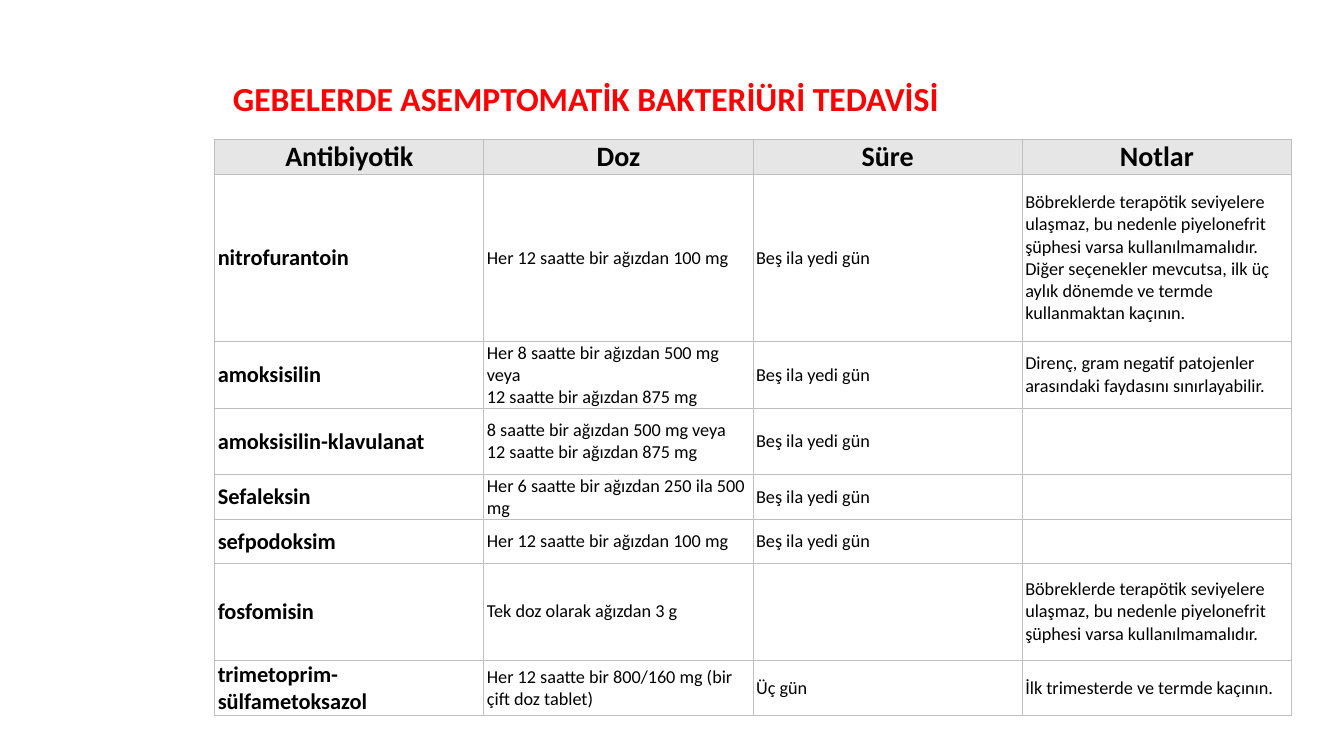
from dataclasses import dataclass

from lxml import etree
from pptx import Presentation
from pptx.dml.color import RGBColor
from pptx.enum.text import MSO_ANCHOR, PP_ALIGN
from pptx.oxml.ns import qn
from pptx.util import Inches, Pt

MIDDLE = MSO_ANCHOR.MIDDLE
LEFT, CENTER = PP_ALIGN.LEFT, PP_ALIGN.CENTER

COLORS = {
    "title": "FF0000",
    "text": "000000",
    "header": "E6E6E6",
    "body": "FFFFFF",
    "border": "BFBFBF",
}
FONT = "Calibri"
COLUMN_WIDTH = 2.67
BORDER_WIDTH = Pt(0.75)
BORDER_SIDES = ("a:lnL", "a:lnR", "a:lnT", "a:lnB")


@dataclass(frozen=True)
class TextStyle:
    size: float
    bold: bool = False
    color: str = "text"
    align: PP_ALIGN = LEFT


@dataclass(frozen=True)
class Treatment:
    height: float
    drug: str
    dose: str
    duration: str = ""
    notes: str = ""


TITLE = TextStyle(24, bold=True, color="title")
HEADER = TextStyle(20, bold=True, align=CENTER)
DRUG = TextStyle(16, bold=True)
DETAIL = TextStyle(13)

HEADER_ROW = Treatment(0.34, "Antibiyotik", "Doz", "Süre", "Notlar")
FIVE_TO_SEVEN_DAYS = "Beş ila yedi gün"
KIDNEY_NOTE = (
    "Böbreklerde terapötik seviyelere ulaşmaz, bu nedenle piyelonefrit "
    "şüphesi varsa kullanılmamalıdır."
)
TREATMENTS = [
    Treatment(
        1.65, "nitrofurantoin", "Her 12 saatte bir ağızdan 100 mg", FIVE_TO_SEVEN_DAYS,
        KIDNEY_NOTE + "\nDiğer seçenekler mevcutsa, ilk üç aylık dönemde ve termde "
        "kullanmaktan kaçının.",
    ),
    Treatment(
        0.65, "amoksisilin",
        "Her 8 saatte bir ağızdan 500 mg veya\n12 saatte bir ağızdan 875 mg",
        FIVE_TO_SEVEN_DAYS,
        "Direnç, gram negatif patojenler arasındaki faydasını sınırlayabilir.",
    ),
    Treatment(
        0.65, "amoksisilin-klavulanat",
        "8 saatte bir ağızdan 500 mg veya\n12 saatte bir ağızdan 875 mg",
        FIVE_TO_SEVEN_DAYS,
    ),
    Treatment(0.43, "Sefaleksin", "Her 6 saatte bir ağızdan 250 ila 500 mg", FIVE_TO_SEVEN_DAYS),
    Treatment(0.43, "sefpodoksim", "Her 12 saatte bir ağızdan 100 mg", FIVE_TO_SEVEN_DAYS),
    Treatment(0.96, "fosfomisin", "Tek doz olarak ağızdan 3 g", notes=KIDNEY_NOTE),
    Treatment(
        0.52, "trimetoprim-sülfametoksazol",
        "Her 12 saatte bir 800/160 mg (bir çift doz tablet)", "Üç gün",
        "İlk trimesterde ve termde kaçının.",
    ),
]


def color(name: str) -> RGBColor:
    return RGBColor.from_string(COLORS[name])


def write_text(frame, text: str, style: TextStyle) -> None:
    """Write each line of the text as a paragraph of one run."""
    for index, line in enumerate(text.split("\n")):
        para = frame.add_paragraph() if index else frame.paragraphs[0]
        para.alignment = style.align
        para.font.size = Pt(style.size)
        if not line:
            continue
        span = para.add_run()
        span.text = line
        span.font.name = FONT
        span.font.size = Pt(style.size)
        span.font.bold = style.bold
        span.font.color.rgb = color(style.color)


def add_borders(cell) -> None:
    properties = cell._tc.get_or_add_tcPr()
    for position, side in enumerate(BORDER_SIDES):
        line = etree.Element(qn(side), w=str(BORDER_WIDTH))
        fill = etree.SubElement(line, qn("a:solidFill"))
        etree.SubElement(fill, qn("a:srgbClr"), val=COLORS["border"])
        properties.insert(position, line)


def fill_cell(cell, text: str, style: TextStyle, background: str) -> None:
    cell.vertical_anchor = MIDDLE
    cell.margin_left = cell.margin_right = Inches(0.03)
    cell.margin_top = cell.margin_bottom = Inches(0.01)
    cell.fill.solid()
    cell.fill.fore_color.rgb = color(background)
    write_text(cell.text_frame, text, style)
    add_borders(cell)


def add_title(page) -> None:
    box = page.shapes.add_textbox(Inches(2.13), Inches(0.74), Inches(10.08), Inches(0.52))
    frame = box.text_frame
    frame.word_wrap = True
    frame.vertical_anchor = MIDDLE
    frame.margin_left = Inches(0.18)
    write_text(frame, "GEBELERDE ASEMPTOMATİK BAKTERİÜRİ TEDAVİSİ", TITLE)
    frame.paragraphs[0].line_spacing = 0.9


def add_treatment_table(page) -> None:
    rows = [HEADER_ROW, *TREATMENTS]
    height = sum(row.height for row in rows)
    table = page.shapes.add_table(
        len(rows), 4, Inches(2.13), Inches(1.38), Inches(4 * COLUMN_WIDTH), Inches(height)
    ).table
    table.horz_banding = False
    for column in table.columns:
        column.width = Inches(COLUMN_WIDTH)
    for row_index, row in enumerate(rows):
        table.rows[row_index].height = Inches(row.height)
        is_header = row is HEADER_ROW
        styles = [HEADER] * 4 if is_header else [DRUG, DETAIL, DETAIL, DETAIL]
        texts = (row.drug, row.dose, row.duration, row.notes)
        for column_index, (text, style) in enumerate(zip(texts, styles)):
            cell = table.cell(row_index, column_index)
            fill_cell(cell, text, style, "header" if is_header else "body")


def main() -> None:
    deck = Presentation()
    deck.slide_width, deck.slide_height = Inches(13.33), Inches(7.5)
    page = deck.slides.add_slide(deck.slide_layouts[6])
    add_title(page)
    add_treatment_table(page)
    deck.save("out.pptx")


if __name__ == "__main__":
    main()
